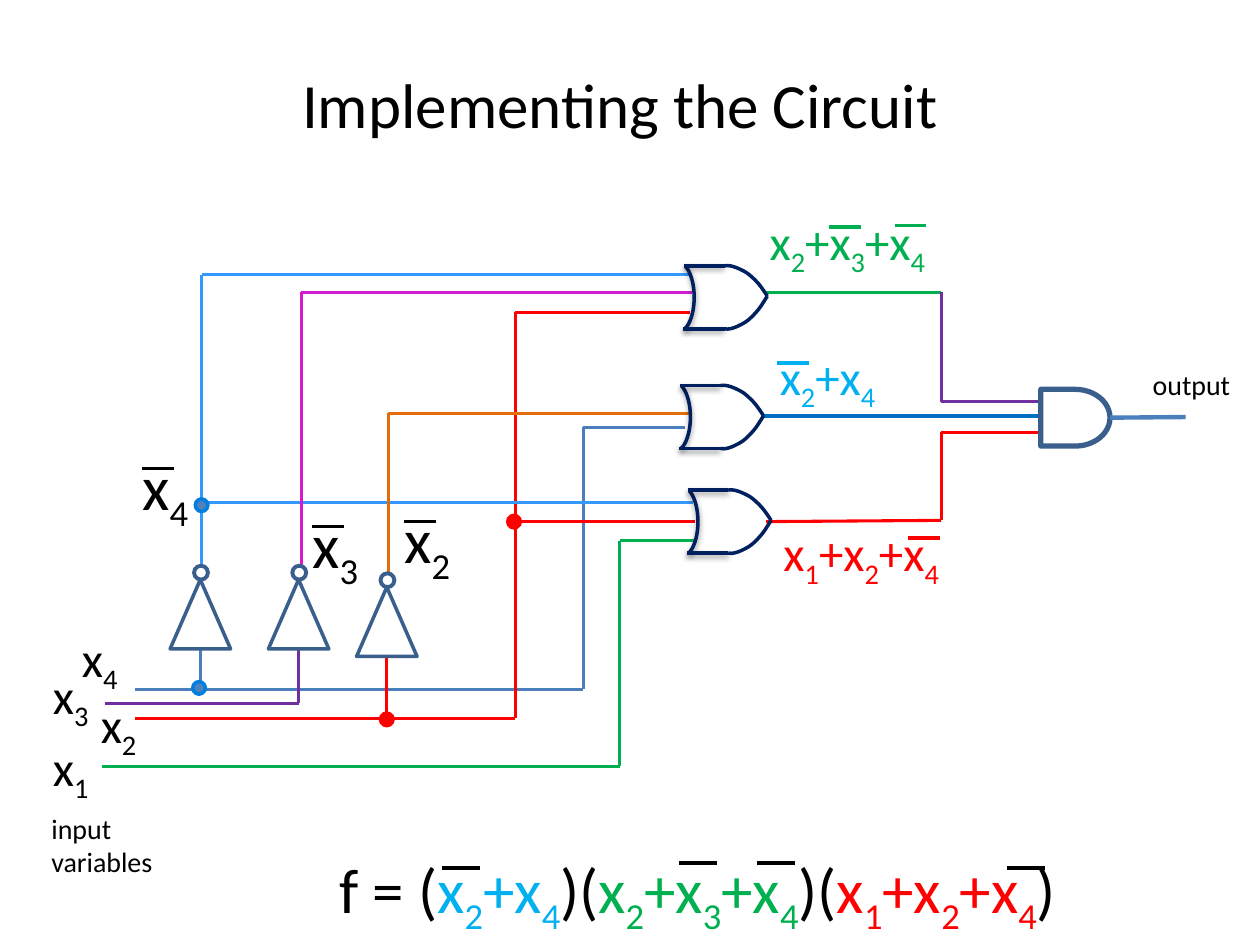
from dataclasses import dataclass
from itertools import groupby

from lxml import etree
from pptx import Presentation
from pptx.dml.color import RGBColor
from pptx.enum.shapes import MSO_CONNECTOR as Connector, MSO_SHAPE as Shape
from pptx.enum.text import MSO_ANCHOR as Anchor, PP_ALIGN as Align
from pptx.oxml import parse_xml
from pptx.oxml.ns import qn
from pptx.util import Inches, Pt

FONT = "Calibri"
COLORS = {
    "black": "000000", "white": "FFFFFF", "red": "FF0000", "green": "00B050",
    "cyan": "00B0F0", "sky": "3399FF", "steel": "4B7EBC", "blue": "0070C0",
    "purple": "7030A0", "magenta": "D51BD1", "orange": "E46C0A",
    "navy": "002060", "outline": "3A5F8C", "dot": "4F81BD", "dot_edge": "007FDE",
}
SHADOW = (
    '<a:effectLst xmlns:a="http://schemas.openxmlformats.org/drawingml/2006/main">'
    '<a:outerShdw blurRad="40000" dist="20000" dir="5400000" rotWithShape="0">'
    '<a:srgbClr val="000000"><a:alpha val="38000"/></a:srgbClr>'
    '</a:outerShdw></a:effectLst>'
)
Point = tuple[float, float]


@dataclass
class Wire:
    color: str
    points: list[Point]
    width: float = 1.75


@dataclass
class Label:
    left: float
    top: float
    width: float
    height: float
    terms: list[tuple[str, str]]  # text and colour; digits become subscripts
    size: int = 28
    inset: bool = False
    bars: tuple[Point, ...] = ()  # left end of each overline
    bar_length: float = 0.25
    bar_width: float = 2.25


def rgb(name: str) -> RGBColor:
    return RGBColor.from_string(COLORS[name])


def add_line(shapes, start: Point, end: Point, color: str, width: float, shadow=False):
    s = shapes.add_connector(Connector.STRAIGHT, *map(Inches, start + end))
    s.line.color.rgb = rgb(color)
    s.line.width = Pt(width)
    if shadow:
        s._element.spPr.append(parse_xml(SHADOW))
    else:
        etree.SubElement(s._element.spPr, qn("a:effectLst"))
    return s


def style_shape(s, line: str, width: float, fill: str = "") -> None:
    s.shadow.inherit = False
    s.line.color.rgb = rgb(line)
    s.line.width = Pt(width)
    if fill:
        s.fill.solid()
        s.fill.fore_color.rgb = rgb(fill)
    else:
        s.fill.background()


def add_outline(shapes, kind, box: tuple, line: str, width: float, fill: str = ""):
    s = shapes.add_shape(kind, *map(Inches, box))
    style_shape(s, line, width, fill)
    return s


def add_label(shapes, label: Label) -> None:
    box = (label.left, label.top, label.width, label.height)
    tf = shapes.add_textbox(*map(Inches, box)).text_frame
    tf.word_wrap = True
    if not label.inset:
        tf.margin_left = tf.margin_right = tf.margin_top = tf.margin_bottom = 0
    p = tf.paragraphs[0]
    for text, color in label.terms:
        for is_sub, chars in groupby(text, str.isdigit):
            r = p.add_run()
            r.text = "".join(chars)
            r.font.name, r.font.size = FONT, Pt(label.size)
            r.font.color.rgb = rgb(color)
            if is_sub:
                r.font._element.set("baseline", "-25000")
    bar_color = label.terms[0][1]
    for x, y in label.bars:
        add_line(shapes, (x, y), (x + label.bar_length, y), bar_color, label.bar_width)


def add_inverter(shapes, x: float, y: float) -> None:
    add_outline(shapes, Shape.ISOSCELES_TRIANGLE, (x, y, 0.48, 0.55), "outline", 2)
    add_outline(shapes, Shape.OVAL, (x + 0.19, y - 0.11, 0.11, 0.11), "outline", 2.25, "white")


def bezier(a: Point, b: Point, c: Point, d: Point, t: float) -> Point:
    u = 1 - t
    return tuple(u**3 * i + 3 * u * u * t * j + 3 * u * t * t * k + t**3 * m
                 for i, j, k, m in zip(a, b, c, d))


# Upper nose of an OR gate, relative to the gate's corner
NOSE = [(0.48, 0.02), (0.53, 0.01), (0.59, 0.04), (0.63, 0.06), (0.67, 0.08),
        (0.7, 0.11), (0.73, 0.14), (0.76, 0.17), (0.78, 0.2), (0.82, 0.26)]
NOSE_POINTS = NOSE[:1] + [bezier(*NOSE[i:i + 4], step / 6)
                          for i in (0, 3, 6) for step in range(1, 7)]


def add_or_gate(shapes, x: float, y: float) -> None:
    arc = add_outline(shapes, Shape.ARC, (x, y, 0.24, 0.54), "navy", 2)
    arc.adjustments[0], arc.adjustments[1] = 168.841, 48.406
    spPr = arc._element.spPr
    spPr.replace(spPr.find(qn("a:effectLst")), parse_xml(SHADOW))
    for left, dy in ((0.16, 0.02), (0.15, 0.52)):
        add_line(shapes, (x + left, y + dy), (x + 0.48, y + dy), "navy", 2, shadow=True)
    lower = [(px, 0.52 - (py - 0.02) * 0.26 / 0.24) for px, py in NOSE_POINTS]
    for curve in (NOSE_POINTS, lower):
        points = [(Inches(x + px), Inches(y + py)) for px, py in curve]
        builder = shapes.build_freeform(*points[0])
        builder.add_line_segments(points[1:], close=False)
        style_shape(builder.convert_to_shape(), "navy", 2)


WIRES = [
    # Inputs and their inverters
    Wire("steel", [(1.07, 5.47), (4.63, 5.47), (4.63, 3.39), (5.44, 3.39)]),
    Wire("steel", [(1.59, 5.46), (1.59, 5.15)]),
    Wire("purple", [(0.83, 5.58), (2.37, 5.58), (2.37, 5.15)]),
    Wire("red", [(1.07, 5.7), (4.09, 5.7), (4.09, 2.48), (5.48, 2.48)]),
    Wire("red", [(3.07, 5.71), (3.07, 5.21)]),
    Wire("red", [(4.07, 4.14), (5.52, 4.14)]),
    Wire("green", [(0.81, 6.08), (4.92, 6.08), (4.92, 4.29), (5.53, 4.29)]),
    # Inverted signals
    Wire("sky", [(1.6, 4.55), (1.6, 2.18), (5.49, 2.18)]),
    Wire("sky", [(1.6, 3.99), (5.5, 3.99)]),
    Wire("magenta", [(2.39, 4.5), (2.39, 2.32), (5.49, 2.32)]),
    Wire("orange", [(3.08, 4.56), (3.08, 3.28), (5.49, 3.28)]),
    # OR outputs to the AND gate
    Wire("green", [(6.08, 2.32), (7.47, 2.32)]),
    Wire("purple", [(7.47, 2.32), (7.47, 3.19), (8.27, 3.19)]),
    Wire("blue", [(6.05, 3.3), (8.26, 3.3)], 2.25),
    Wire("red", [(6.08, 4.14), (7.47, 4.13), (7.47, 3.43), (8.27, 3.43)]),
]
DOTS = [(3.02, 5.66, "red", "red"), (4.03, 4.09, "red", "red"),
        (1.53, 5.41, "dot", "dot_edge"), (1.55, 3.96, "dot", "dot_edge")]
INVERTERS = [(1.35, 4.6), (2.13, 4.6), (2.83, 4.66)]
OR_GATES = [(5.27, 2.09), (5.24, 3.04), (5.3, 3.87)]

INPUTS = [("x1", 0.42, 5.85), ("x2", 0.8, 5.51), ("x3", 0.42, 5.28), ("x4", 0.65, 4.99)]
INVERTED = [("x4", 1.13, 3.55), ("x3", 2.48, 4.01), ("x2", 3.21, 3.97)]
LABELS = [
    *(Label(x, y, 0.41, 0.47, [(t, "black")]) for t, x, y in INPUTS),
    *(Label(x, y, 0.54, 0.61, [(t, "black")], 36, bars=((x, y + 0.17),), bar_width=2)
      for t, x, y in INVERTED),
    Label(0.31, 6.39, 1.2, 0.64, [("input variables", "black")], 16, True),
    Label(9.05, 2.87, 0.95, 0.37, [("output", "black")], 16, True),
    Label(6.01, 1.63, 2.23, 0.57, [("x2+x3+x4", "green")], inset=True,
          bars=((6.58, 1.8), (7.1, 1.79))),
    Label(6.09, 2.7, 1.09, 0.57, [("x2+x4", "cyan")], inset=True, bars=((6.17, 2.88),)),
    Label(6.12, 4.1, 2.23, 0.57, [("x1+x2+x4", "red")], inset=True, bars=((7.21, 4.27),)),
    Label(2.48, 6.7, 6.47, 0.71,
          [(" f = (", "black"), ("x2+x4", "cyan"), (")(", "black"), ("x2+x3+x4", "green"),
           (")(", "black"), ("x1+x2+x4", "red"), (")", "black")], 36, True,
          ((3.51, 6.89), (5.39, 6.85), (6.01, 6.85), (7.99, 6.89)), 0.3),
]


def main() -> None:
    prs = Presentation()
    prs.slide_width, prs.slide_height = Inches(10), Inches(7.5)
    shapes = prs.slides.add_slide(prs.slide_layouts[5]).shapes

    # Title
    title = shapes.title
    title.left, title.top, title.width, title.height = map(Inches, (0.17, 0.3, 9.5, 1.04))
    tf = title.text_frame
    tf.text = "Implementing the Circuit"
    tf.vertical_anchor = Anchor.MIDDLE
    p = tf.paragraphs[0]
    p.alignment = Align.CENTER
    font = p.runs[0].font
    font.name, font.size, font.color.rgb = FONT, Pt(36), rgb("black")

    # Wires and junctions
    for wire in WIRES:
        for start, end in zip(wire.points, wire.points[1:]):
            add_line(shapes, start, end, wire.color, wire.width)
    for x, y, fill, line in DOTS:
        add_outline(shapes, Shape.OVAL, (x, y, 0.1, 0.1), line, 2, fill)

    # Gates
    for x, y in INVERTERS:
        add_inverter(shapes, x, y)
    for x, y in OR_GATES:
        add_or_gate(shapes, x, y)
    and_gate = add_outline(shapes, Shape.FLOWCHART_DELAY, (8.26, 3.09, 0.55, 0.45), "outline", 3)
    output = add_line(shapes, (8.81, 3.31), (9.41, 3.31), "steel", 2.5)
    output.begin_connect(and_gate, 3)

    # Labels
    for label in LABELS:
        add_label(shapes, label)

    prs.save("out.pptx")


if __name__ == "__main__":
    main()
